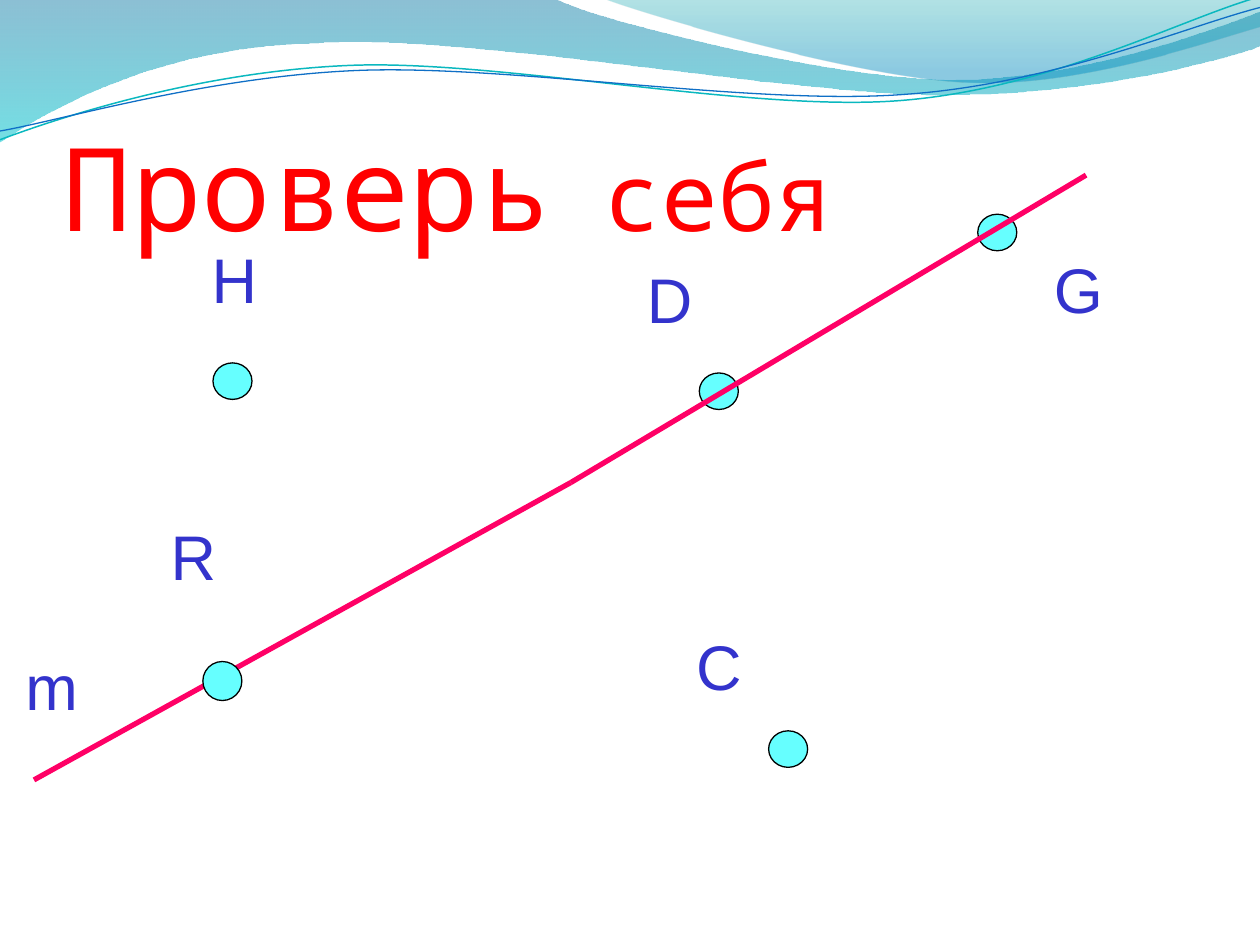
"""Build a slide with a line, five points and their letters under a wave banner."""
from math import cos, radians, sin

from lxml.etree import SubElement
from pptx import Presentation
from pptx.dml.color import RGBColor
from pptx.enum.shapes import MSO_CONNECTOR, MSO_SHAPE
from pptx.enum.text import MSO_ANCHOR, PP_ALIGN
from pptx.oxml import parse_xml
from pptx.oxml.ns import nsdecls, qn
from pptx.util import Inches, Pt

RED = RGBColor(0xFF, 0x00, 0x00)
PINK = RGBColor(0xFF, 0x00, 0x66)
AQUA = RGBColor(0x66, 0xFF, 0xFF)
CYAN = RGBColor(0x00, 0xFF, 0xFF)
INK = RGBColor(0x33, 0x33, 0xCC)
BLACK = RGBColor(0x00, 0x00, 0x00)
TEAL = RGBColor(0x0A, 0xB8, 0xBF)
BLUE = RGBColor(0x0F, 0x6F, 0xC6)
DEEP = RGBColor(0x00, 0x74, 0xA1)
SEA = RGBColor(0x00, 0xC6, 0xCF)
MINT = RGBColor(0x00, 0xA1, 0xA9)
SKY = RGBColor(0x00, 0x8B, 0xBF)
TILT = -2.7

deck = Presentation()
deck.slide_width, deck.slide_height = Inches(10), Inches(7.5)
slide = deck.slides.add_slide(deck.slide_layouts[6])
shapes = slide.shapes


def add_wave(start, steps, close):
    """Draw an outline whose steps are line ends (x, y) or cubic curves."""
    dots = [(Inches(step[i]), Inches(step[i + 1]))
            for step in steps for i in range(0, len(step), 2)]
    pen = shapes.build_freeform(*map(Inches, start), scale=1.0)
    pen.add_line_segments(dots, close=close)
    wave = pen.convert_to_shape()
    wave.shadow.inherit = False
    sides = iter(list(wave._element.iter(qn("a:lnTo"))))
    for step in steps:
        side = next(sides)
        if len(step) == 6:
            bend = side.makeelement(qn("a:cubicBezTo"))
            side.addprevious(bend)
            for part in (side, next(sides), next(sides)):
                bend.append(part[0])
                part.getparent().remove(part)
    return wave


def add_box(left, top, width, height, form):
    """Add a text box and return its frame."""
    frame = shapes.add_textbox(*map(Inches, (left, top, width, height))).text_frame
    for name, value in form.items():
        setattr(frame, name, value)
    return frame


bands = [
    ((0, 0), [(4.4, -0.01), (4.76, 0.17, 6.64, 0.63, 7.58, 0.63),
              (8.53, 0.63, 9.58, 0.26, 10, 0.09), (10.01, 0.36),
              (9.83, 0.44, 8.7, 0.76, 7.46, 0.75), (6.22, 0.75, 3.82, 0.28, 2.57, 0.34),
              (1.29, 0.36, 0.46, 0.83, -0.01, 1.13)],
     [(0, DEEP, 45), (1, SEA, 55)]),
    ((4.79, -0.01), [(5.09, 0.11, 6.82, 0.62, 7.69, 0.65),
                     (8.56, 0.69, 9.61, 0.32, 10, 0.21), (10, 0)],
     [(0, MINT, 30), (0.8, SKY, 45)]),
]
for start, steps, stops in bands:
    band = add_wave(start, steps, True)
    band.line.fill.background()
    band.fill.gradient()
    band.fill.gradient_angle = 270
    for stop, (place, tint, alpha) in zip(band.fill.gradient_stops, stops):
        stop.position = place
        stop.color.rgb = tint
    tags = band._element.spPr.iter(qn("a:srgbClr"))
    for tag, (place, tint, alpha) in zip(tags, stops):
        SubElement(tag, qn("a:alpha"), val=str(alpha * 1000))

curves = [
    ((0, 1.11), [(0.48, 0.93, 1.58, 0.57, 2.77, 0.52), (3.95, 0.47, 5.93, 0.89, 7.13, 0.8),
                 (8.33, 0.71, 9.38, 0.15, 9.98, -0.02)], 0.57, TEAL, 0.85),
    ((0, 1.04), [(0.47, 0.96, 1.64, 0.61, 2.83, 0.56), (4.03, 0.51, 5.97, 0.84, 7.17, 0.75),
                 (8.36, 0.67, 9.41, 0.21, 10, 0.06)], 0.59, BLUE, 0.75),
]
c, s = cos(radians(TILT)), sin(radians(TILT))
for start, steps, mid, tint, width in curves:
    flat = []
    for step in [start, *steps]:
        pairs = [(step[i] - 5, step[i + 1] - mid) for i in range(0, len(step), 2)]
        flat.append([v for x, y in pairs for v in (5 + x * c + y * s, mid - x * s + y * c)])
    curve = add_wave(flat[0], flat[1:], False)
    curve.rotation = TILT
    curve.fill.background()
    curve.line.color.rgb = tint
    curve.line.width = Pt(width)

title = add_box(0.5, 0.77, 9, 1.25, {
    "word_wrap": True, "vertical_anchor": MSO_ANCHOR.BOTTOM, "margin_left": 0,
    "margin_right": 0, "margin_top": Inches(0.05), "margin_bottom": 0})
for text, size in (("Проверь", 66), (" себя", 54)):
    run = title.paragraphs[0].add_run()
    run.text = text
    run.font.color.rgb = RED
    for name, value in {"name": "Noto Sans Mono", "size": Pt(size)}.items():
        setattr(run.font, name, value)

parts = [
    ((0.27, 6.19, 4.53, 3.83), [(1.61, 5.25, 0.31), (5.55, 2.96, 0.29), (6.1, 5.8, 0.29),
                                (7.76, 1.7, 0.29), (1.69, 2.88, 0.29)]),
    ((4.53, 3.83, 8.62, 1.39), []),
]
for ends, points in parts:
    line = shapes.add_connector(MSO_CONNECTOR.STRAIGHT, *map(Inches, ends))
    line.line.color.rgb = PINK
    line.line.width = Pt(3)
    SubElement(line._element.spPr, qn("a:effectLst"))
    for left, top, height in points:
        point = shapes.add_shape(MSO_SHAPE.OVAL, *map(Inches, (left, top, 0.31, height)))
        point.shadow.inherit = False
        point.fill.solid()
        point.fill.fore_color.rgb = AQUA
        point.line.color.rgb = BLACK
        point.line.width = Pt(0.75)

letters = [
    ("m", 0.2, 5.09, 0.42, 0.57, RED), ("C", 5.39, 4.93, 0.63, 0.79, CYAN),
    ("D", 5, 2.02, 0.63, 0.81, CYAN), ("R", 1.3, 4.06, 0.47, 0.87, CYAN),
    ("H", 1.61, 1.86, 0.5, 0.91, CYAN), ("G", 8.23, 1.94, 0.66, 0.91, CYAN),
]
for text, left, top, width, height, tint in letters:
    frame = add_box(left, top, width, height,
                    {"word_wrap": False, "margin_left": 0, "margin_right": 0})
    para = frame.paragraphs[0]
    para.alignment = PP_ALIGN.CENTER
    run = para.add_run()
    run.text = text
    run.font.color.rgb = tint
    for name, value in {"name": "Arial", "size": Pt(36)}.items():
        setattr(run.font, name, value)
    props = run._r.get_or_add_rPr()
    SubElement(props.find(".//" + qn("a:srgbClr")), qn("a:alpha"), val="50000")
    props.insert(0, parse_xml(
        f'<a:ln {nsdecls("a")} w="12700"><a:solidFill><a:srgbClr val="{INK}"/>'
        '</a:solidFill></a:ln>'))

deck.save("out.pptx")
